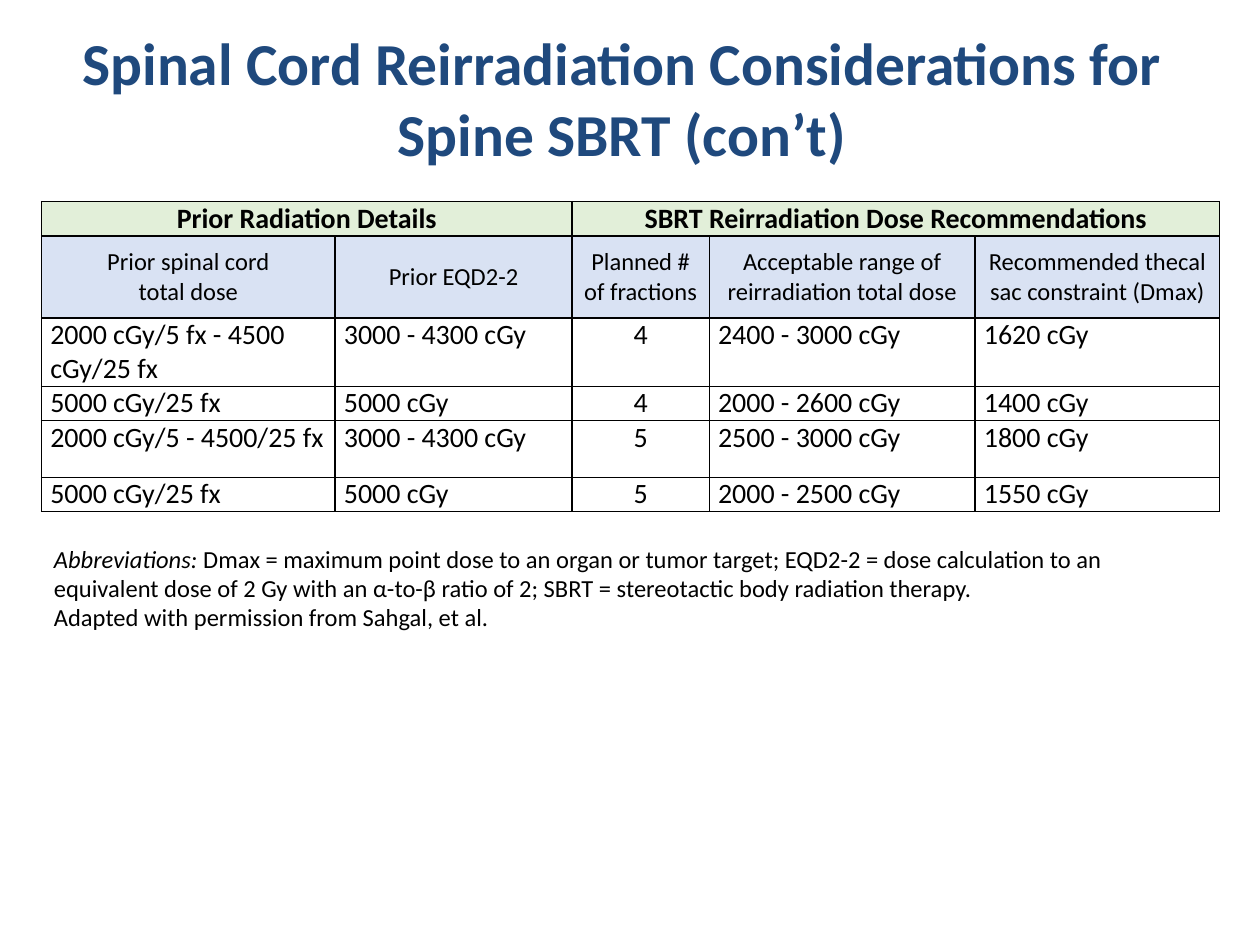
"""Builds a slide on spinal cord reirradiation doses for spine SBRT."""
import pptx
import pptx.dml.color
import pptx.enum.text
import pptx.oxml
import pptx.oxml.ns
import pptx.util

Inches = pptx.util.Inches
Align = pptx.enum.text.PP_ALIGN
Anchor = pptx.enum.text.MSO_ANCHOR


def color(value):
    return pptx.dml.color.RGBColor.from_string(value)


def add_run(paragraph, text, size, shade="000000", bold=False, italic=False):
    run = paragraph.add_run()
    run.text = text
    run.font.name = "Calibri"
    run.font.size = pptx.util.Pt(size)
    run.font.bold = bold
    run.font.italic = italic
    run.font.color.rgb = color(shade)


deck = pptx.Presentation()
deck.slide_width, deck.slide_height = Inches(10), Inches(7.5)
slide = deck.slides.add_slide(deck.slide_layouts[5])

title = slide.shapes.title
title.left, title.top = Inches(0), Inches(0.16)
title.width, title.height = Inches(9.87), Inches(1.22)
title.text_frame.vertical_anchor = Anchor.MIDDLE
title.text_frame.paragraphs[0].alignment = Align.CENTER
add_run(title.text_frame.paragraphs[0],
        "Spinal Cord Reirradiation Considerations for Spine SBRT (con’t)",
        34, "1F497D", bold=True)

dose_rows = [
    ["Prior Radiation Details", "", "SBRT Reirradiation Dose Recommendations", "", ""],
    ["Prior spinal cord\ntotal dose", "Prior EQD2-2", "Planned # of fractions",
     "Acceptable range of\nreirradiation total dose",
     "Recommended thecal sac constraint (Dmax)"],
    ["2000 cGy/5 fx - 4500 cGy/25 fx", "3000 - 4300 cGy", "4", "2400 - 3000 cGy", "1620 cGy"],
    ["5000 cGy/25 fx", "5000 cGy", "4", "2000 - 2600 cGy", "1400 cGy"],
    ["2000 cGy/5 - 4500/25 fx", "3000 - 4300 cGy", "5", "2500 - 3000 cGy", "1800 cGy"],
    ["5000 cGy/25 fx", "5000 cGy", "5", "2000 - 2500 cGy", "1550 cGy"],
]
column_widths = [2.33, 1.88, 1.09, 2.11, 1.94]
row_heights = [0.26, 0.65, 0.45, 0.21, 0.45, 0.21]
header_fills = ["E2EFD9", "D9E2F3"]
fractions_column = 2

doses = slide.shapes.add_table(
    len(dose_rows), len(column_widths),
    Inches(0.33), Inches(1.6), Inches(9.34), Inches(2.44)).table
doses.first_row = doses.horz_banding = False
for column, width in zip(doses.columns, column_widths):
    column.width = Inches(width)
for row, height in zip(doses.rows, row_heights):
    row.height = Inches(height)
doses.cell(0, 0).merge(doses.cell(0, 1))
doses.cell(0, 2).merge(doses.cell(0, 4))

for r, row_texts in enumerate(dose_rows):
    is_header = r < len(header_fills)
    for c, cell_text in enumerate(row_texts):
        cell = doses.cell(r, c)
        cell.margin_left = cell.margin_right = Inches(0.07)
        cell.margin_top = cell.margin_bottom = Inches(0)
        cell.vertical_anchor = Anchor.MIDDLE if is_header else Anchor.TOP
        properties = cell._tc.get_or_add_tcPr()
        for edge in ("lnL", "lnR", "lnT", "lnB"):
            properties.append(pptx.oxml.parse_xml(
                f'<a:{edge} {pptx.oxml.ns.nsdecls("a")} w="12700"><a:solidFill>'
                f'<a:srgbClr val="000000"/></a:solidFill></a:{edge}>'))
        if is_header:
            cell.fill.solid()
            cell.fill.fore_color.rgb = color(header_fills[r])
        else:
            cell.fill.background()
        if cell.is_spanned:
            continue
        for i, line in enumerate(cell_text.split("\n")):
            frame = cell.text_frame
            paragraph = frame.add_paragraph() if i else frame.paragraphs[0]
            centered = is_header or c == fractions_column
            paragraph.alignment = Align.CENTER if centered else Align.LEFT
            add_run(paragraph, line, 14 if r == 1 else 16, bold=r == 0)

footnote = slide.shapes.add_textbox(
    Inches(0.33), Inches(4.26), Inches(9.34), Inches(0.81)).text_frame
footnote.word_wrap = True
footnote.vertical_anchor = Anchor.MIDDLE
abbreviations = footnote.paragraphs[0]
add_run(abbreviations, "Abbreviations: ", 14, italic=True)
add_run(abbreviations,
        "Dmax = maximum point dose to an organ or tumor target; EQD2-2 = dose "
        "calculation to an equivalent dose of 2 Gy with an α-to-β ratio of 2; "
        "SBRT = stereotactic body radiation therapy.", 14)
add_run(footnote.add_paragraph(), "Adapted with permission from Sahgal, et al.", 14)

deck.save("out.pptx")
